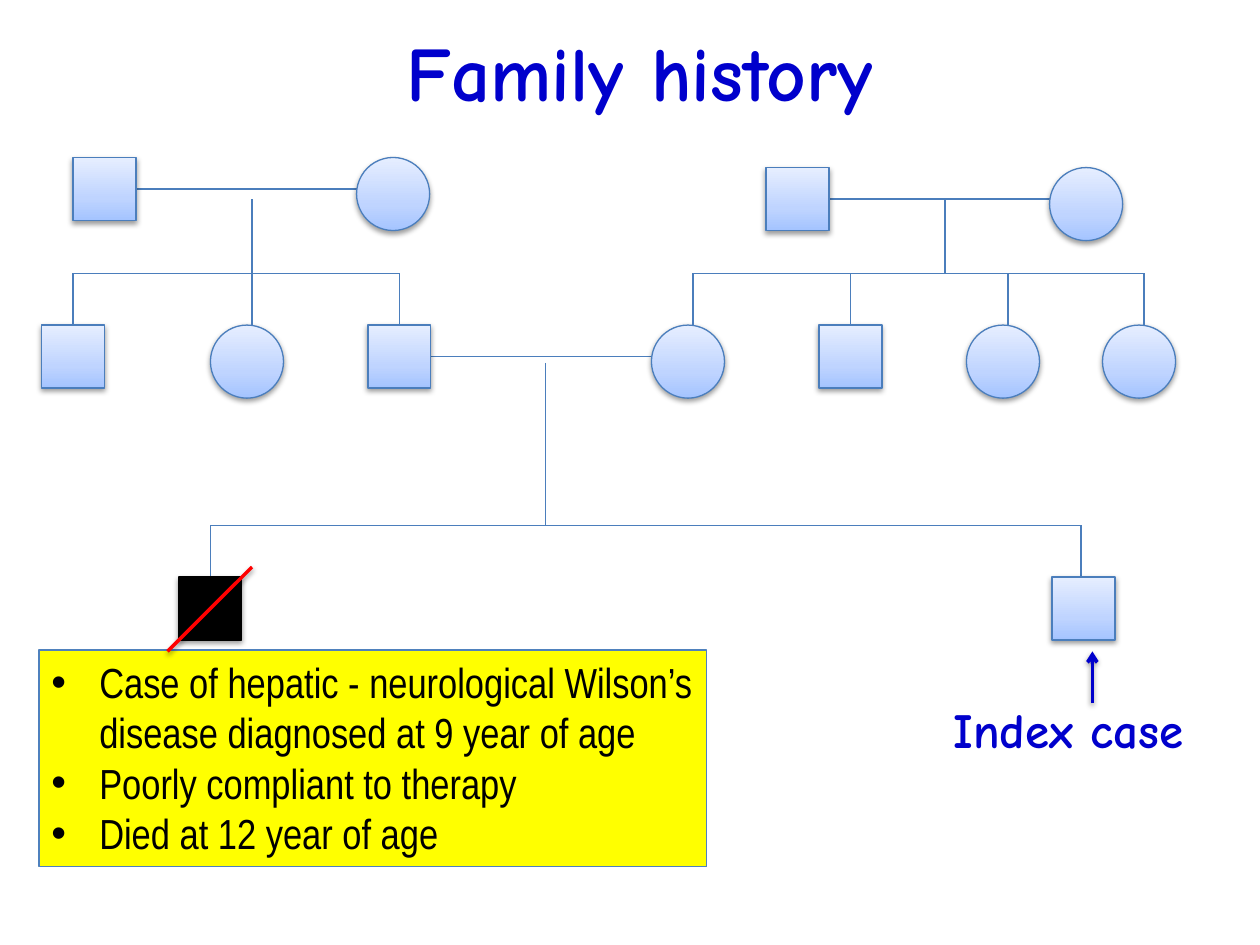
from lxml import etree
from pptx import Presentation
from pptx.dml.color import RGBColor
from pptx.enum import shapes, text
from pptx.oxml import parse_xml
from pptx.oxml.ns import nsdecls, qn
from pptx.util import Inches, Pt

NAVY = RGBColor(0x00, 0x00, 0xCC)
STEEL = RGBColor(0x4B, 0x7E, 0xBC)
NOTE_EDGE = RGBColor(0x4F, 0x81, 0xBD)
YELLOW = RGBColor(0xFF, 0xFF, 0x00)
RED = RGBColor(0xFF, 0x00, 0x00)
BLACK = RGBColor(0x00, 0x00, 0x00)
SKY_STOPS = ((0, RGBColor(0xA4, 0xC4, 0xFF)), (35, RGBColor(0xBF, 0xD4, 0xFF)),
             (100, RGBColor(0xE6, 0xEE, 0xFF)))

MALE = shapes.MSO_SHAPE.RECTANGLE
FEMALE = shapes.MSO_SHAPE.OVAL
SIZES = {MALE: 0.5, FEMALE: 0.58}
DROP = 0.41


def set_effects(shape, shadow):
    """Give the shape a soft drop shadow, or an empty effect list."""
    properties = shape._element.spPr
    for old in properties.findall(qn("a:effectLst")):
        properties.remove(old)
    effects = etree.SubElement(properties, qn("a:effectLst"))
    if shadow:
        outer = etree.SubElement(effects, qn("a:outerShdw"), blurRad=str(Pt(3.1)),
                                 dist=str(Pt(1.6)), dir="5400000", rotWithShape="0")
        color = etree.SubElement(outer, qn("a:srgbClr"), val=str(BLACK))
        etree.SubElement(color, qn("a:alpha"), val="38000")


def fill_sky(shape):
    """Fill the shape with the vertical three-stop blue gradient."""
    stops = "".join(f'<a:gs pos="{position * 1000}"><a:srgbClr val="{color}"/></a:gs>'
                    for position, color in SKY_STOPS)
    gradient = parse_xml(f'<a:gradFill {nsdecls("a")} rotWithShape="1"><a:gsLst>{stops}</a:gsLst>'
                         '<a:lin ang="16200000" scaled="0"/></a:gradFill>')
    shape._element.spPr.find(qn("a:prstGeom")).addnext(gradient)


def add_line(slide, start, end, color=STEEL, width=0.75, shadow=False, arrow=False):
    """Draw a straight connector between two points in inches."""
    line = slide.shapes.add_connector(shapes.MSO_CONNECTOR.STRAIGHT,
                                      *map(Inches, (*start, *end)))
    line.line.color.rgb = color
    line.line.width = Pt(width)
    if arrow:
        etree.SubElement(line.line._get_or_add_ln(), qn("a:tailEnd"), type="arrow")
    set_effects(line, shadow)


def add_person(slide, kind, left, top, deceased=False):
    """Draw one family member, with a red stroke across the deceased."""
    size = SIZES[kind]
    person = slide.shapes.add_shape(kind, *map(Inches, (left, top, size, size)))
    if deceased:
        person.fill.solid()
        person.fill.fore_color.rgb = BLACK
    else:
        fill_sky(person)
    person.line.color.rgb = BLACK if deceased else STEEL
    person.line.width = Pt(0.75)
    set_effects(person, True)
    if deceased:
        add_line(slide, (left - 0.09, top + 0.59), (left + 0.58, top - 0.08), RED, 2, True)


def add_couple(slide, left, top):
    """Draw a man and a woman joined by a marriage line."""
    add_line(slide, (left + 0.5, top + 0.25), (left + 2.25, top + 0.25))
    add_person(slide, MALE, left, top)
    add_person(slide, FEMALE, left + 2.25, top)


def add_descent(slide, top, parent, drops):
    """Draw the sibling bar with its drops, and the stem up to the parents."""
    stem_left, stem_top = parent
    add_line(slide, (stem_left, stem_top), (stem_left, top))
    add_line(slide, (drops[0], top), (drops[-1], top))
    for left in drops:
        add_line(slide, (left, top), (left, top + DROP))


def add_pedigree(slide, left, top):
    """Draw three generations from the upper left corner given."""
    add_couple(slide, left + 0.25, top)
    add_couple(slide, left + 5.75, top + 0.08)
    add_couple(slide, left + 2.59, top + 1.33)
    for kind, offset in ((MALE, 0), (FEMALE, 1.34), (MALE, 6.17),
                         (FEMALE, 7.34), (FEMALE, 8.42)):
        add_person(slide, kind, left + offset, top + 1.33)
    add_descent(slide, top + 0.92, (left + 1.67, top + 0.33),
                [left + x for x in (0.25, 1.67, 2.84)])
    add_descent(slide, top + 0.92, (left + 7.17, top + 0.33),
                [left + x for x in (5.17, 6.42, 7.67, 8.75)])
    add_descent(slide, top + 2.92, (left + 4, top + 1.63), [left + 1.34, left + 8.25])
    add_person(slide, MALE, left + 1.09, top + 3.33, deceased=True)
    add_person(slide, MALE, left + 8.02, top + 3.33)


def add_run(paragraph, words, font, size, color, bold=False):
    """Add one formatted run to the paragraph."""
    run = paragraph.add_run()
    run.text = words
    run.font.name = font
    run.font.size = Pt(size)
    run.font.bold = bold
    run.font.color.rgb = color


def add_heading(slide, box, words, size, anchor=text.MSO_ANCHOR.TOP):
    """Place a centred bold navy line of text in the box."""
    frame = slide.shapes.add_textbox(*map(Inches, box)).text_frame
    frame.word_wrap = True
    frame.vertical_anchor = anchor
    paragraph = frame.paragraphs[0]
    paragraph.alignment = text.PP_ALIGN.CENTER
    add_run(paragraph, words, "Comic Neue", size, NAVY, bold=True)


def add_index_label(slide, left, top):
    """Place the index case label below its upward arrow."""
    add_line(slide, (left + 1.38, top + 0.41), (left + 1.38, top), NAVY, 2, True, True)
    add_heading(slide, (left, top + 0.33, 2.38, 0.57), "Index case", 28)


def add_case_notes(slide, box, notes):
    """Place the bulleted case notes in a yellow box."""
    panel = slide.shapes.add_shape(shapes.MSO_SHAPE.RECTANGLE, *map(Inches, box))
    panel.shadow.inherit = False
    panel.fill.solid()
    panel.fill.fore_color.rgb = YELLOW
    panel.line.color.rgb = NOTE_EDGE
    panel.line.width = Pt(0.75)
    frame = panel.text_frame
    frame.word_wrap = True
    frame.vertical_anchor = text.MSO_ANCHOR.TOP
    for index, note in enumerate(notes):
        paragraph = frame.add_paragraph() if index else frame.paragraphs[0]
        paragraph.alignment = text.PP_ALIGN.LEFT
        properties = paragraph._p.get_or_add_pPr()
        properties.set("marL", str(Inches(0.38)))
        properties.set("indent", str(-Inches(0.38)))
        etree.SubElement(properties, qn("a:buFont"), typeface="Arial")
        etree.SubElement(properties, qn("a:buChar"), char="•")
        add_run(paragraph, note, "Arial Narrow", 24, BLACK)


def main():
    """Build the family history slide and save it."""
    presentation = Presentation()
    presentation.slide_width = Inches(10)
    presentation.slide_height = Inches(7.5)
    slide = presentation.slides.add_slide(presentation.slide_layouts[6])
    add_heading(slide, (0.58, 0.25, 9, 0.62), "Family history", 44, text.MSO_ANCHOR.MIDDLE)
    add_case_notes(slide, (0.31, 5.16, 5.3, 1.72), (
        "Case of hepatic - neurological Wilson’s disease diagnosed at 9 year of age",
        "Poorly compliant to therapy",
        "Died at 12 year of age",
    ))
    add_pedigree(slide, 0.33, 1.25)
    add_index_label(slide, 7.29, 5.17)
    presentation.save("out.pptx")


if __name__ == "__main__":
    main()
